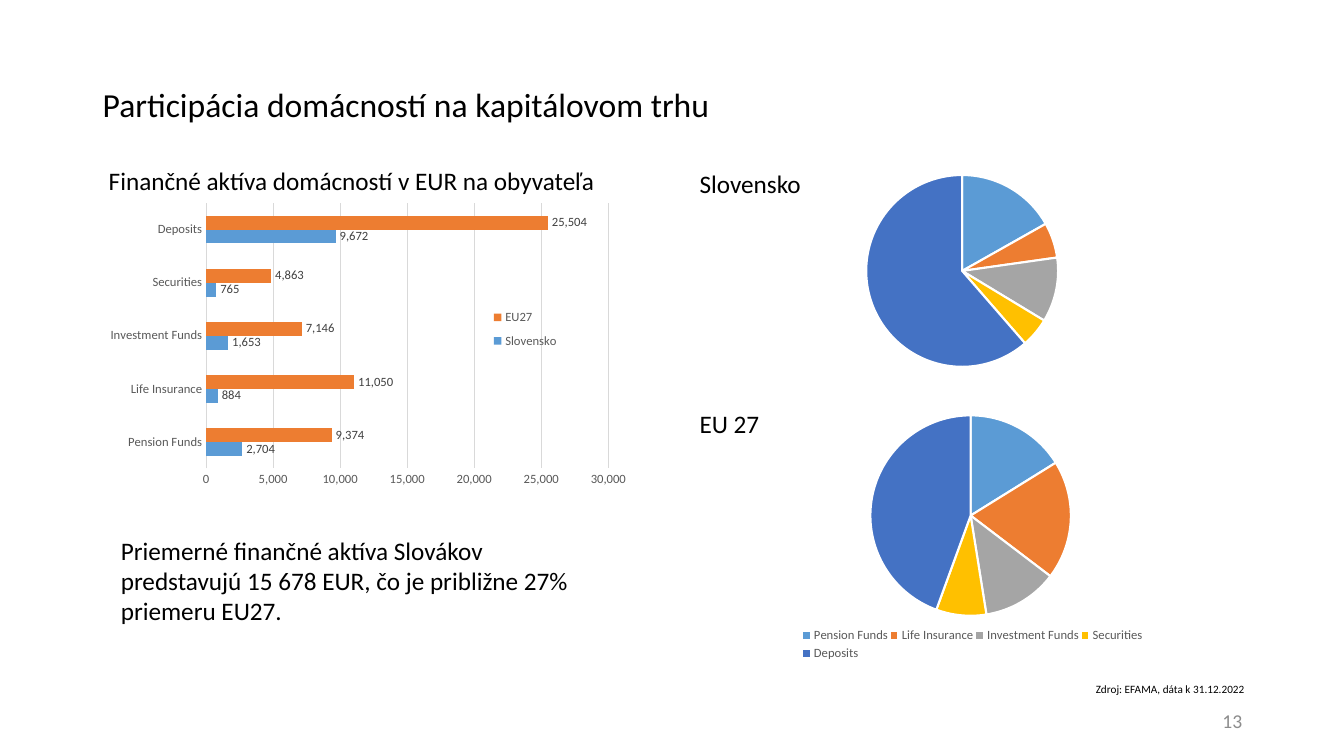
import pptx
import pptx.chart.data
import pptx.dml.color
import pptx.enum.chart
import pptx.enum.text
import pptx.util
from lxml import etree
from pptx.util import Inches

COLORS = {"text": "000000", "number": "8C8C8C", "axis": "595959", "label": "404040",
          "grid": "D9D9D9", "white": "FFFFFF", "blue": "5B9BD5", "orange": "ED7D31",
          "gray": "A5A5A5", "yellow": "FFC000", "navy": "4472C4"}
RGB = {k: pptx.dml.color.RGBColor.from_string(v) for k, v in COLORS.items()}
XL = pptx.enum.chart
ALIGN = pptx.enum.text.PP_ALIGN
ANCHOR = pptx.enum.text.MSO_ANCHOR


def set_font(font, size, color):
    for name, value in {"name": "Calibri", "size": pptx.util.Pt(size), "bold": False}.items():
        setattr(font, name, value)
    font.color.rgb = RGB[color]


def set_layout(parent, index, box, inner=False):
    """Place a plot area or legend by fractions of its chart."""
    ns = "{http://schemas.openxmlformats.org/drawingml/2006/chart}"
    for old in parent.findall(ns + "layout"):
        parent.remove(old)
    layout = etree.Element(ns + "layout")
    parent.insert(index, layout)
    manual = etree.SubElement(layout, ns + "manualLayout")
    values = {"layoutTarget": "inner"} if inner else {}
    values.update({"xMode": "edge", "yMode": "edge"})
    values.update(zip("xywh", map(str, box)))
    for tag, value in values.items():
        etree.SubElement(manual, ns + tag).set("val", value)


prs = pptx.Presentation()
prs.slide_width, prs.slide_height = Inches(13.33), Inches(7.5)
s = prs.slides.add_slide(prs.slide_layouts[6])

# Texts: wording, box, size, colour, alignment, anchor
texts = [
    ("Participácia domácností na kapitálovom trhu", (0.92, 0.41, 11.5, 1.25), 24, "text",
     ALIGN.LEFT, ANCHOR.MIDDLE),
    ("13", (9.42, 6.95, 3, 0.4), 14, "number", ALIGN.RIGHT, ANCHOR.MIDDLE),
    ("Zdroj: EFAMA, dáta k 31.12.2022", (10.77, 6.72, 1.8, 0.24), 8, "text",
     ALIGN.LEFT, ANCHOR.TOP),
    ("Priemerné finančné aktíva Slovákov predstavujú 15 678 EUR, čo je približne 27% "
     "priemeru EU27.", (1.1, 5.26, 4.71, 1.01), 18, "text", ALIGN.LEFT, ANCHOR.TOP),
    ("EU 27", (6.84, 4, 4.33, 0.4), 18, "text", ALIGN.LEFT, ANCHOR.TOP),
    ("Finančné aktíva domácností v EUR na obyvateľa", (0.98, 1.59, 5.32, 0.4), 18, "text",
     ALIGN.LEFT, ANCHOR.TOP),
    ("Slovensko", (6.84, 1.62, 4.76, 0.4), 18, "text", ALIGN.LEFT, ANCHOR.TOP),
]
for text, box, size, color, align, anchor in texts:
    tf = s.shapes.add_textbox(*map(Inches, box)).text_frame
    tf.word_wrap = True
    tf.vertical_anchor = anchor
    p = tf.paragraphs[0]
    p.alignment = align
    r = p.add_run()
    r.text = text
    set_font(r.font, size, color)

# Charts: type, box, categories, series, plot layout, legend layout
assets = ["Pension Funds", "Life Insurance", "Investment Funds", "Securities", "Deposits"]
BAR, PIE = XL.XL_CHART_TYPE.BAR_CLUSTERED, XL.XL_CHART_TYPE.PIE
charts = [
    (BAR, (0.98, 1.95, 5.32, 3.25), assets,
     {"Slovensko": (2704, 884, 1653, 765, 9672), "EU27": (9374, 11050, 7146, 4863, 25504)},
     (0.2, 0.02, 0.75, 0.81), (0.72, 0.32, 0.15, 0.17)),
    (PIE, (7.93, 1.59, 3.47, 2.44), ["1", "2", "3", "4", "5"],
     {"Series 1": (17, 6, 11, 5, 62)}, (0.19, 0.06, 0.55, 0.78), None),
    (PIE, (7.9, 3.73, 3.49, 2.98), assets,
     {"Series 1": (16, 19, 12, 8, 44)}, (0.21, 0.06, 0.57, 0.81), (0.01, 0.83, 0.98, 0.13)),
]
palette = ["blue", "orange", "gray", "yellow", "navy"]
for kind, box, categories, series, plot_box, legend_box in charts:
    data = pptx.chart.data.CategoryChartData(number_format="#,##0")
    data.categories = categories
    for name, values in series.items():
        data.add_series(name, values)
    chart = s.shapes.add_chart(kind, *map(Inches, box), data).chart
    chart.has_title = False
    set_font(chart.font, 10, "text")
    plot = chart.plots[0]
    plot.vary_by_categories = kind == PIE
    set_layout(chart.element.xpath("c:chart/c:plotArea")[0], 0, plot_box, inner=True)

    chart.has_legend = legend_box is not None
    if legend_box:
        legend = chart.legend
        legend.position = XL.XL_LEGEND_POSITION.BOTTOM
        legend.include_in_layout = False
        set_font(legend.font, 9, "axis")
        set_layout(chart.element.xpath("c:chart/c:legend")[0], 1, legend_box)

    if kind == PIE:
        for i, color in enumerate(palette):
            fmt = plot.series[0].points[i].format
            fmt.fill.solid()
            fmt.fill.fore_color.rgb = RGB[color]
            fmt.line.color.rgb = RGB["white"]
            fmt.line.width = pptx.util.Pt(1.5)
        continue

    # Bars and value labels
    plot.gap_width, plot.overlap = 182, 0
    for ser, color in zip(plot.series, palette):
        ser.format.fill.solid()
        ser.format.fill.fore_color.rgb = RGB[color]
        labels = ser.data_labels
        label_format = {"show_value": True, "number_format": "#,##0",
                        "number_format_is_linked": False,
                        "position": XL.XL_LABEL_POSITION.OUTSIDE_END}
        for name, value in label_format.items():
            setattr(labels, name, value)
        set_font(labels.font, 9, "label")

    # Axes and grid
    cat, val = chart.category_axis, chart.value_axis
    for axis in (cat, val):
        axis.major_tick_mark = axis.minor_tick_mark = XL.XL_TICK_MARK.NONE
        set_font(axis.tick_labels.font, 9, "axis")
    val.minimum_scale, val.maximum_scale, val.major_unit = 0, 30000, 5000
    val.tick_labels.number_format = "#,##0"
    val.tick_labels.number_format_is_linked = False
    val.format.line.fill.background()
    val.has_major_gridlines = True
    for line in (cat.format.line, val.major_gridlines.format.line):
        line.color.rgb = RGB["grid"]
        line.width = pptx.util.Pt(0.75)

prs.save("out.pptx")
